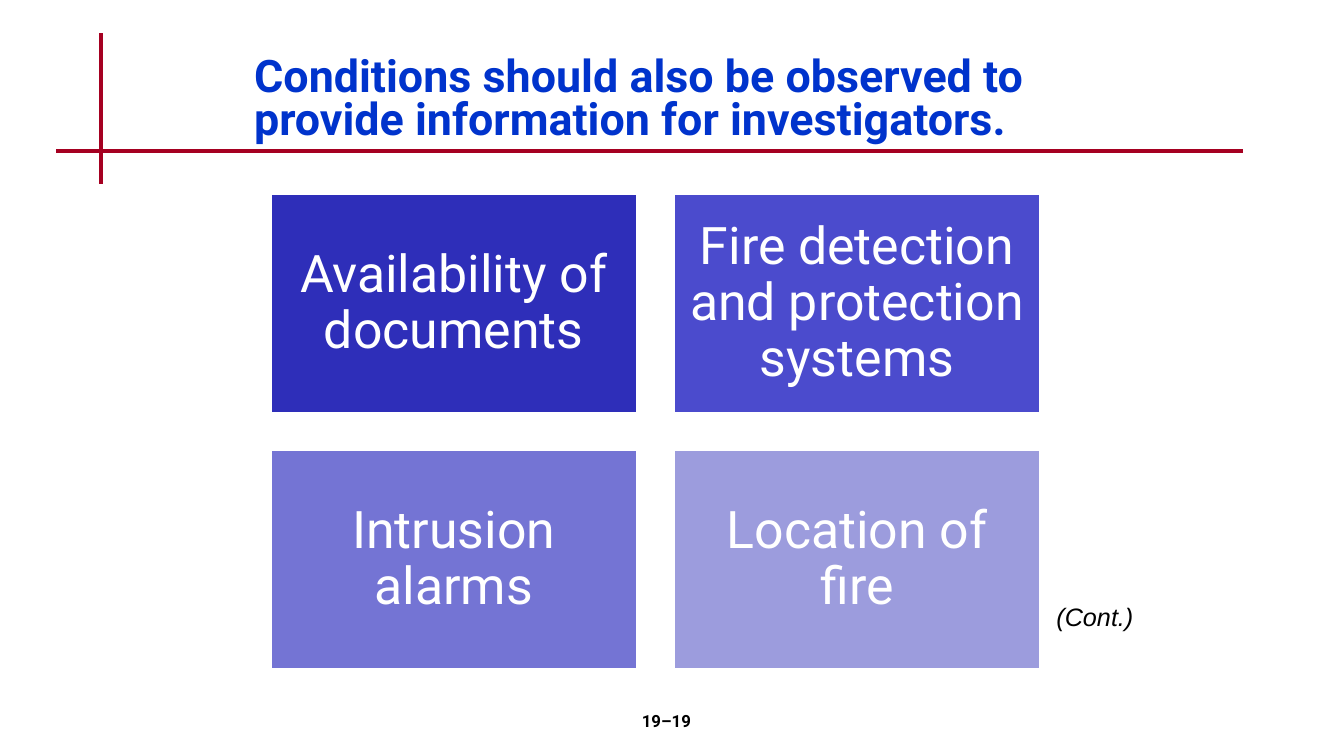
from pptx import Presentation
from pptx.dml.color import RGBColor
from pptx.enum.shapes import MSO_CONNECTOR, MSO_SHAPE
from pptx.enum.text import MSO_ANCHOR, PP_ALIGN
from pptx.oxml.ns import qn
from pptx.util import Inches, Pt
from lxml import etree


def rgb(code):
    return RGBColor.from_string(code)


def write(shape, text, font, size, color, align, bold=False, italic=False):
    tf = shape.text_frame
    tf.word_wrap = True
    p = tf.paragraphs[0]
    p.text = text
    p.alignment = align
    p.font.name = font
    p.font.size = Pt(size)
    p.font.color.rgb = rgb(color)
    p.font.bold = bold
    p.font.italic = italic
    return tf


prs = Presentation()
prs.slide_width = Inches(13.33)
prs.slide_height = Inches(7.5)
s = prs.slides.add_slide(prs.slide_layouts[5])

for x1, y1, x2, y2 in [(1, 0.33, 1, 1.83), (0.56, 1.5, 12.33, 1.5)]:
    rule = s.shapes.add_connector(
        MSO_CONNECTOR.STRAIGHT, Inches(x1), Inches(y1), Inches(x2), Inches(y2))
    rule.line.color.rgb = rgb("A50021")
    rule.line.width = Pt(3)
    etree.SubElement(rule._element.spPr, qn("a:effectLst"))

title = s.shapes.title
title.left, title.top = Inches(2.42), Inches(0.5)
title.width, title.height = Inches(9.03), Inches(1)
tf = write(title, "Conditions should also be observed to provide information for investigators.",
           "Roboto", 32, "0033CC", PP_ALIGN.LEFT, bold=True)
tf.vertical_anchor = MSO_ANCHOR.MIDDLE
tf.paragraphs[0].line_spacing = 0.8

number = s.shapes.add_textbox(Inches(5.22), Inches(7), Inches(2.78), Inches(0.5))
write(number, "19–19", "Roboto", 12, "000000", PP_ALIGN.CENTER, bold=True)

cont = s.shapes.add_textbox(Inches(9.67), Inches(5.92), Inches(1.67), Inches(0.4))
write(cont, "(Cont.)", "Arial", 18, "000000", PP_ALIGN.RIGHT, italic=True)

conditions = [
    ("Availability of documents", "2E2EB9"),
    ("Fire detection and protection systems", "4B4BCD"),
    ("Intrusion alarms", "7474D4"),
    ("Location of fire", "9C9CDD"),
]
for i, (text, fill) in enumerate(conditions):
    row, col = divmod(i, 2)
    card = s.shapes.add_shape(
        MSO_SHAPE.RECTANGLE, Inches(2.68 + 4 * col), Inches(1.92 + 2.54 * row),
        Inches(3.64), Inches(2.18))
    card.shadow.inherit = False
    card.fill.solid()
    card.fill.fore_color.rgb = rgb(fill)
    card.line.color.rgb = rgb("FFFFFF")
    card.line.width = Pt(2)
    tf = write(card, text, "Roboto", 37, "FFFFFF", PP_ALIGN.CENTER)
    tf.vertical_anchor = MSO_ANCHOR.MIDDLE
    tf.margin_left = tf.margin_right = tf.margin_top = tf.margin_bottom = Inches(0.15)
    tf.paragraphs[0].line_spacing = 0.9

prs.save("out.pptx")
